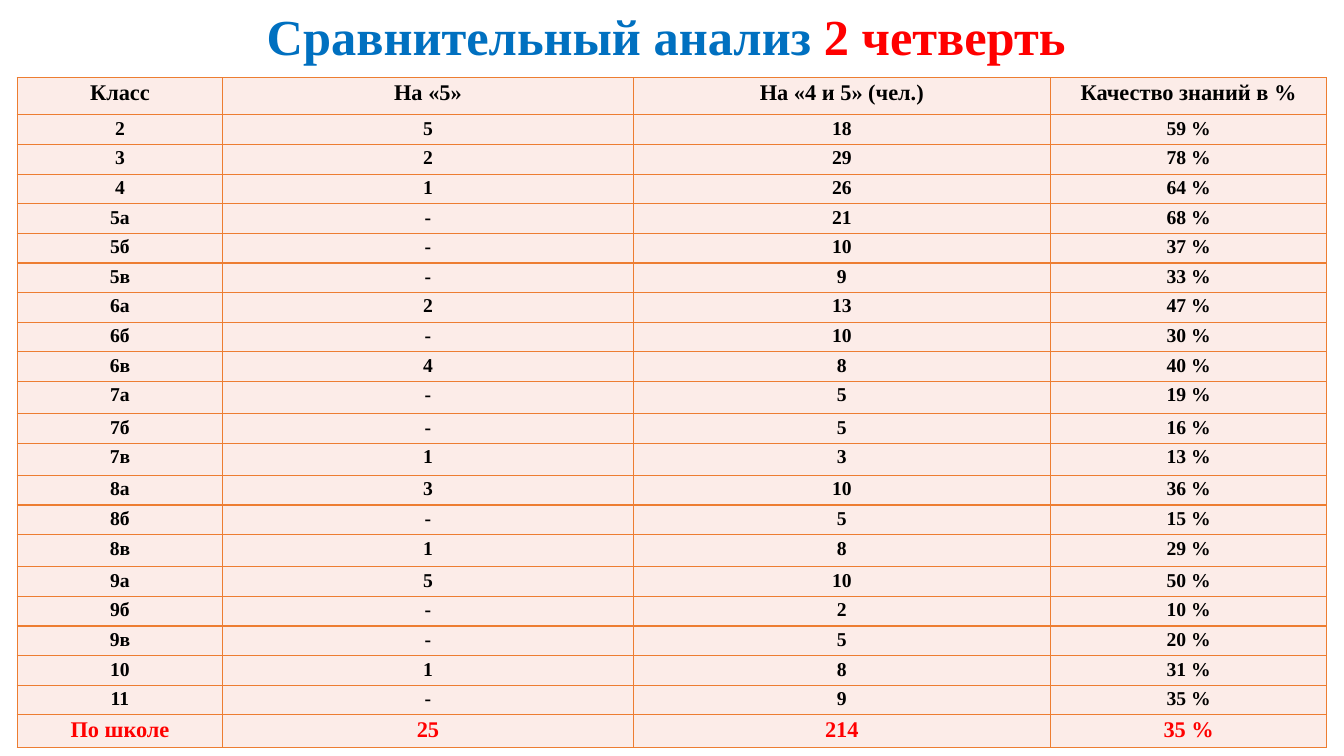
from typing import NamedTuple

from lxml.etree import SubElement
from pptx import Presentation
from pptx.dml.color import RGBColor
from pptx.enum.text import PP_ALIGN
from pptx.oxml.ns import qn
from pptx.slide import Slide
from pptx.table import _Cell
from pptx.util import Inches, Pt

FONT_NAME = "Times New Roman"
BLUE = RGBColor(0x00, 0x70, 0xC0)
RED = RGBColor(0xFF, 0x00, 0x00)
BLACK = RGBColor(0x00, 0x00, 0x00)
CELL_FILL = RGBColor(0xFC, 0xEC, 0xE8)
BORDER_COLOR = RGBColor(0xED, 0x7D, 0x31)

TABLE_HEIGHT = 6.48
HEADER_HEIGHT = 0.37
TALL_HEIGHT = 0.32
COLUMN_WIDTHS = (2.04, 4.07, 4.14, 2.74)
CELL_MARGIN = Inches(0.03)


class ResultRow(NamedTuple):
    grade: str
    excellent: str
    good: str
    quality: str


HEADER = ResultRow("Класс", "На «5»", "На «4 и 5» (чел.)", "Качество знаний в %")
TOTAL = ResultRow("По школе", "25", "214", "35 %")
RESULTS = (
    ResultRow("2", "5", "18", "59 %"),
    ResultRow("3", "2", "29", "78 %"),
    ResultRow("4", "1", "26", "64 %"),
    ResultRow("5а", "-", "21", "68 %"),
    ResultRow("5б", "-", "10", "37 %"),
    ResultRow("5в", "-", "9", "33 %"),
    ResultRow("6а", "2", "13", "47 %"),
    ResultRow("6б", "-", "10", "30 %"),
    ResultRow("6в", "4", "8", "40 %"),
    ResultRow("7а", "-", "5", "19 %"),
    ResultRow("7б", "-", "5", "16 %"),
    ResultRow("7в", "1", "3", "13 %"),
    ResultRow("8а", "3", "10", "36 %"),
    ResultRow("8б", "-", "5", "15 %"),
    ResultRow("8в", "1", "8", "29 %"),
    ResultRow("9а", "5", "10", "50 %"),
    ResultRow("9б", "-", "2", "10 %"),
    ResultRow("9в", "-", "5", "20 %"),
    ResultRow("10", "1", "8", "31 %"),
    ResultRow("11", "-", "9", "35 %"),
)
TALL_GRADES = ("7а", "7в", "8в", TOTAL.grade)


def add_title(slide: Slide) -> None:
    title = slide.shapes.add_textbox(Inches(0.96), Inches(0), Inches(11.42), Inches(0.71))
    title.text_frame.word_wrap = True
    paragraph = title.text_frame.paragraphs[0]
    paragraph.alignment = PP_ALIGN.CENTER
    paragraph.font.name = FONT_NAME
    paragraph.font.size = Pt(36)
    paragraph.font.bold = True
    for text, color in (("Сравнительный анализ ", BLUE), ("2 четверть ", RED)):
        run = paragraph.add_run()
        run.text = text
        run.font.color.rgb = color


def add_borders(cell: _Cell) -> None:
    properties = cell._tc.get_or_add_tcPr()
    for position, side in enumerate(("a:lnL", "a:lnR", "a:lnT", "a:lnB")):
        line = SubElement(properties, qn(side), w=str(Pt(1)))
        fill = SubElement(line, qn("a:solidFill"))
        SubElement(fill, qn("a:srgbClr"), val=str(BORDER_COLOR))
        properties.insert(position, line)


def fill_cell(cell: _Cell, text: str, size: int, color: RGBColor) -> None:
    cell.fill.solid()
    cell.fill.fore_color.rgb = CELL_FILL
    cell.margin_left = cell.margin_right = CELL_MARGIN
    cell.margin_top = cell.margin_bottom = CELL_MARGIN
    add_borders(cell)
    cell.text = text
    paragraph = cell.text_frame.paragraphs[0]
    paragraph.alignment = PP_ALIGN.CENTER
    paragraph.font.name = FONT_NAME
    paragraph.font.size = Pt(size)
    paragraph.font.bold = True
    paragraph.font.color.rgb = color


def row_height(result: ResultRow) -> float:
    """Regular rows share what the header and the tall rows leave."""
    if result is HEADER:
        return HEADER_HEIGHT
    if result.grade in TALL_GRADES:
        return TALL_HEIGHT
    regular_count = len(RESULTS) + 1 - len(TALL_GRADES)
    return (TABLE_HEIGHT - HEADER_HEIGHT - len(TALL_GRADES) * TALL_HEIGHT) / regular_count


def add_results_table(slide: Slide) -> None:
    results = (HEADER, *RESULTS, TOTAL)
    table = slide.shapes.add_table(
        len(results), len(COLUMN_WIDTHS),
        Inches(0.17), Inches(0.77), Inches(sum(COLUMN_WIDTHS)), Inches(TABLE_HEIGHT),
    ).table
    for column, width in zip(table.columns, COLUMN_WIDTHS):
        column.width = Inches(width)
    for row, result in zip(table.rows, results):
        row.height = Inches(row_height(result))
        size = 16 if result in (HEADER, TOTAL) else 14
        color = RED if result is TOTAL else BLACK
        for cell, text in zip(row.cells, result):
            fill_cell(cell, text, size, color)


def main() -> None:
    presentation = Presentation()
    presentation.slide_width = Inches(13.33)
    presentation.slide_height = Inches(7.5)
    slide = presentation.slides.add_slide(presentation.slide_layouts[6])
    add_title(slide)
    add_results_table(slide)
    presentation.save("out.pptx")


if __name__ == "__main__":
    main()
